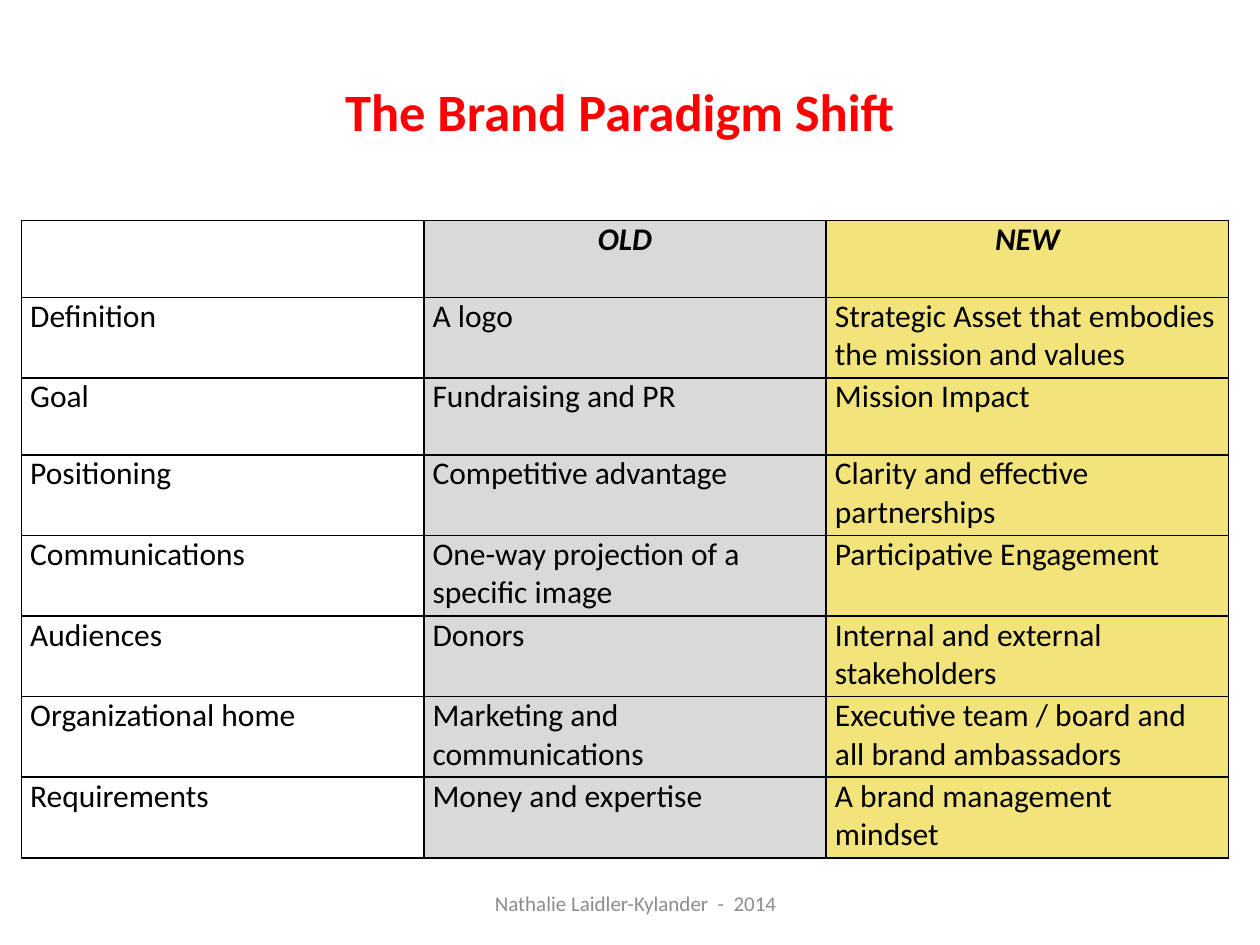
import pptx
import pptx.util
import pptx.dml.color
import pptx.enum.text
from lxml import etree

Inch = pptx.util.Inches
Pt = pptx.util.Pt
Align = pptx.enum.text.PP_ALIGN
Anchor = pptx.enum.text.MSO_ANCHOR

TITLE = "The Brand Paradigm Shift"
FOOTER = "Nathalie Laidler-Kylander  -  2014"
ROWS = [
    ("", "OLD", "NEW"),
    ("Definition", "A logo", "Strategic Asset that embodies the mission and values"),
    ("Goal", "Fundraising and PR", "Mission Impact"),
    ("Positioning", "Competitive advantage", "Clarity and effective partnerships"),
    ("Communications", "One-way projection of a specific image", "Participative Engagement"),
    ("Audiences", "Donors", "Internal and external stakeholders"),
    ("Organizational home", "Marketing and communications",
     "Executive team / board and all brand ambassadors"),
    ("Requirements", "Money and expertise", "A brand management mindset"),
]
COLORS = {"title": "FF0000", "text": "000000", "line": "000000",
          "old": "D9D9D9", "new": "F2E47A", "foot": "8C8C8C"}
FILLS = (None, "old", "new")
WIDE, HIGH = 10, 7.5
LEFT, TOP, SPAN = 0.17, 1.75, 9.58
SHORT, TALL = 0.61, 0.64
SHORT_ROWS = (0, 2)


def rgb(name):
    return pptx.dml.color.RGBColor.from_string(COLORS[name])


def write(frame, text, size=18, color="text", bold=False, slant=False,
          align=Align.LEFT, anchor=None):
    frame.word_wrap = True
    if anchor is not None:
        frame.vertical_anchor = anchor
    para = frame.paragraphs[0]
    para.alignment = align
    para.font.size = Pt(size)
    if text:
        run = para.add_run()
        run.text = text
        font = run.font
        font.name, font.size = "Calibri", Pt(size)
        font.bold, font.italic = bold, slant
        font.color.rgb = rgb(color)


def rule(cell, width=1):
    """Draw a line on all four sides of a cell."""
    props = cell._tc.get_or_add_tcPr()
    space = props.nsmap["a"]
    for spot, side in enumerate(("lnL", "lnR", "lnT", "lnB")):
        line = etree.Element(f"{{{space}}}{side}", w=str(Pt(width)))
        fill = etree.SubElement(line, f"{{{space}}}solidFill")
        etree.SubElement(fill, f"{{{space}}}srgbClr", val=COLORS["line"])
        props.insert(spot, line)


def add_grid(slide):
    highs = [SHORT if r in SHORT_ROWS else TALL for r in range(len(ROWS))]
    count = len(FILLS)
    frame = slide.shapes.add_table(len(ROWS), count, Inch(LEFT), Inch(TOP),
                                   Inch(SPAN), Inch(sum(highs)))
    table = frame.table
    table.first_row = table.horz_banding = False
    for col in table.columns:
        col.width = Inch(SPAN / count)
    for r, (row, high) in enumerate(zip(ROWS, highs)):
        table.rows[r].height = Inch(high)
        head = r == 0
        for c, (text, fill) in enumerate(zip(row, FILLS)):
            cell = table.cell(r, c)
            cell.margin_left = cell.margin_right = Inch(0.07)
            cell.margin_top = cell.margin_bottom = 0
            if fill:
                cell.fill.solid()
                cell.fill.fore_color.rgb = rgb(fill)
            else:
                cell.fill.background()
            rule(cell)
            write(cell.text_frame, text, bold=head, slant=head,
                  align=Align.CENTER if head else Align.LEFT)


def main():
    deck = pptx.Presentation()
    deck.slide_width, deck.slide_height = Inch(WIDE), Inch(HIGH)
    slide = deck.slides.add_slide(deck.slide_layouts[5])

    title = slide.shapes.title
    title.left, title.top = Inch(0.42), Inch(0.25)
    title.width, title.height = Inch(9), Inch(1.25)
    write(title.text_frame, TITLE, size=30, color="title", bold=True,
          align=Align.CENTER, anchor=Anchor.MIDDLE)

    add_grid(slide)

    foot = slide.shapes.add_textbox(Inch(2.92), Inch(6.67), Inch(4.25), Inch(1))
    write(foot.text_frame, FOOTER, size=12, color="foot",
          align=Align.CENTER, anchor=Anchor.MIDDLE)
    deck.save("out.pptx")


if __name__ == "__main__":
    main()
